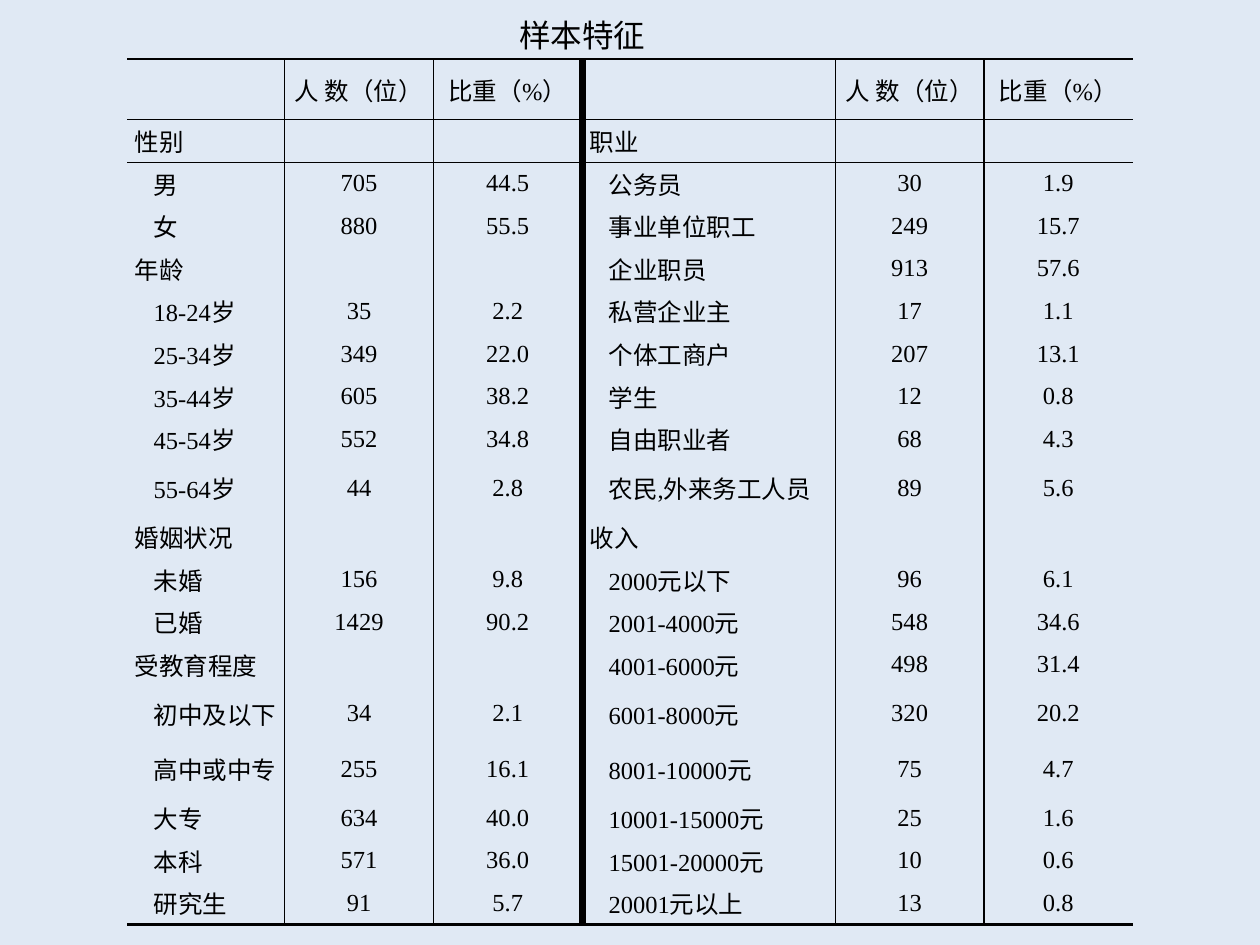
import pptx
import pptx.util
import pptx.dml.color
import pptx.enum.text
import pptx.oxml.ns
import lxml.etree

Inches, Pt = pptx.util.Inches, pptx.util.Pt
RGB = pptx.dml.color.RGBColor.from_string
ALIGN = pptx.enum.text.PP_ALIGN
ANCHOR = pptx.enum.text.MSO_ANCHOR
qn = pptx.oxml.ns.qn

COLORS = {"background": "E0E9F4", "ink": "000000"}
TITLE = "样本特征"
HEADER = ("", "人 数（位）", "比重（%）")
LEFT = [
    ("性别",), ("男", "705", "44.5"), ("女", "880", "55.5"),
    ("年龄",), ("18-24岁", "35", "2.2"), ("25-34岁", "349", "22.0"),
    ("35-44岁", "605", "38.2"), ("45-54岁", "552", "34.8"), ("55-64岁", "44", "2.8"),
    ("婚姻状况",), ("未婚", "156", "9.8"), ("已婚", "1429", "90.2"),
    ("受教育程度",), ("初中及以下", "34", "2.1"), ("高中或中专", "255", "16.1"),
    ("大专", "634", "40.0"), ("本科", "571", "36.0"), ("研究生", "91", "5.7"),
]
RIGHT = [
    ("职业",), ("公务员", "30", "1.9"), ("事业单位职工", "249", "15.7"),
    ("企业职员", "913", "57.6"), ("私营企业主", "17", "1.1"), ("个体工商户", "207", "13.1"),
    ("学生", "12", "0.8"), ("自由职业者", "68", "4.3"), ("农民,外来务工人员", "89", "5.6"),
    ("收入",), ("2000元以下", "96", "6.1"), ("2001-4000元", "548", "34.6"),
    ("4001-6000元", "498", "31.4"), ("6001-8000元", "320", "20.2"),
    ("8001-10000元", "75", "4.7"), ("10001-15000元", "25", "1.6"),
    ("15001-20000元", "10", "0.6"), ("20001元以上", "13", "0.8"),
]
COL_WIDTHS = [1.25, 1.18, 1.18, 2.01, 1.18, 1.18]
TABLE_HEIGHT = 6.87
HEADER_HEIGHT = 0.48
TALL_ROWS, TALL_HEIGHT = (9, 14, 15), 0.44
VERTICAL_RULES = [0, 1, 1, 4.5, 1, 1, 0]
NO_STYLE = "{2D5ABB26-0587-4C30-8999-92F81FD0307C}"


def add_border(cell, side, width):
    if not width:
        return
    ln = lxml.etree.SubElement(cell._tc.get_or_add_tcPr(), qn("a:" + side), w=str(Pt(width)))
    fill = lxml.etree.SubElement(ln, qn("a:solidFill"))
    lxml.etree.SubElement(fill, qn("a:srgbClr"), val=COLORS["ink"])


def format_font(font, name, size):
    font.name, font.size, font.bold = name, Pt(size), False
    font.color.rgb = RGB(COLORS["ink"])


def fill_cell(cell, text, centered, indented):
    cell.margin_left = cell.margin_right = Inches(0.06)
    cell.margin_top = cell.margin_bottom = 0
    cell.vertical_anchor = ANCHOR.MIDDLE
    cell.fill.background()
    p = cell.text_frame.paragraphs[0]
    p.alignment = ALIGN.CENTER if centered else ALIGN.JUSTIFY
    if not text:
        lxml.etree.SubElement(p._p, qn("a:endParaRPr"), sz="1400")
        return
    p.text = text
    if indented:
        p._p.get_or_add_pPr().set("indent", str(Inches(0.15)))
    format_font(p.runs[0].font, "Times New Roman", 14)


def add_sample_table(s):
    pad = lambda group: group + ("",) * (3 - len(group))
    rows = [HEADER * 2] + [pad(a) + pad(b) for a, b in zip(LEFT, RIGHT)]
    last = len(rows) - 1
    horizontal_rules = [1.5, 1] + [0] * (last - 1) + [1.5]
    row_height = (TABLE_HEIGHT - HEADER_HEIGHT - len(TALL_ROWS) * TALL_HEIGHT) / (last - len(TALL_ROWS))

    frame = s.shapes.add_table(len(rows), len(COL_WIDTHS), Inches(1.01), Inches(0.47),
                               Inches(sum(COL_WIDTHS)), Inches(TABLE_HEIGHT))
    table = frame.table
    table.first_row = table.horz_banding = False
    table._tbl.tblPr.find(qn("a:tableStyleId")).text = NO_STYLE
    for column, width in zip(table.columns, COL_WIDTHS):
        column.width = Inches(width)

    for i, values in enumerate(rows):
        height = HEADER_HEIGHT if i == 0 else TALL_HEIGHT if i in TALL_ROWS else row_height
        table.rows[i].height = Inches(height)
        for j, text in enumerate(values):
            cell = table.cell(i, j)
            add_border(cell, "lnL", VERTICAL_RULES[j])
            add_border(cell, "lnR", VERTICAL_RULES[j + 1])
            add_border(cell, "lnT", horizontal_rules[i])
            add_border(cell, "lnB", horizontal_rules[i + 1])
            is_label = j % 3 == 0
            has_count = is_label and values[j + 1] != ""
            fill_cell(cell, text, not is_label, has_count)


def add_title(s):
    title = s.shapes.title
    title.left, title.top = Inches(4.02), Inches(0.08)
    title.width, title.height = Inches(1.21), Inches(0.4)
    tf = title.text_frame
    tf.text = TITLE
    tf.word_wrap = False
    tf.auto_size = pptx.enum.text.MSO_AUTO_SIZE.NONE
    tf.vertical_anchor = ANCHOR.TOP
    p = tf.paragraphs[0]
    p.alignment = ALIGN.LEFT
    format_font(p.runs[0].font, "Calibri", 18)


def main():
    prs = pptx.Presentation()
    prs.slide_width, prs.slide_height = Inches(10), Inches(7.5)
    s = prs.slides.add_slide(prs.slide_layouts[5])
    s.background.fill.solid()
    s.background.fill.fore_color.rgb = RGB(COLORS["background"])
    add_sample_table(s)
    add_title(s)
    prs.save("out.pptx")


if __name__ == "__main__":
    main()
